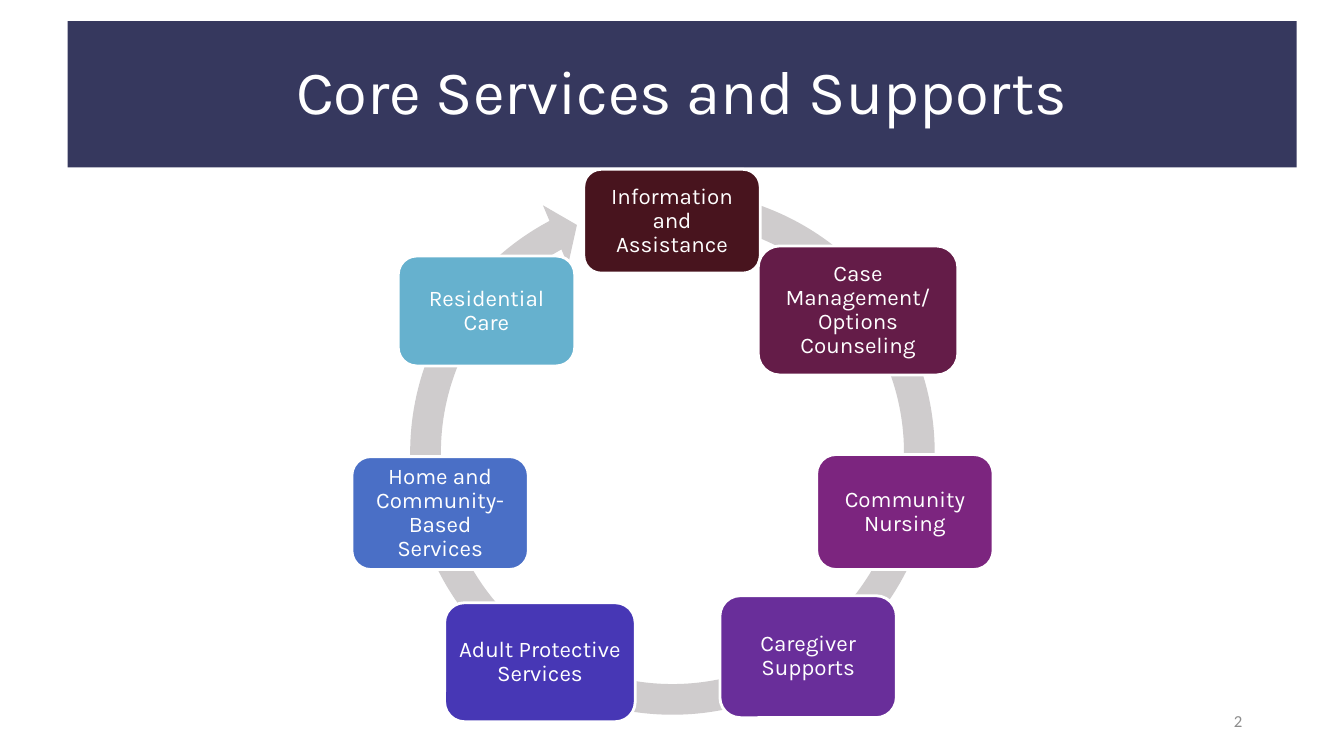
from dataclasses import dataclass

from pptx import Presentation
from pptx.dml.color import RGBColor
from pptx.enum.shapes import MSO_SHAPE as Preset
from pptx.enum.text import MSO_ANCHOR as Anchor, PP_ALIGN as Align
from pptx.shapes.autoshape import Shape
from pptx.slide import Slide
from pptx.util import Inches, Pt


@dataclass(frozen=True)
class Theme:
    white: str = "FFFFFF"
    banner: str = "36385E"
    ring: str = "CFCCCD"
    number: str = "8C8C8C"
    heading_font: str = "Karla"
    number_font: str = "Calibri"
    title_size: int = 44
    service_size: int = 16
    number_size: int = 12


@dataclass(frozen=True)
class Service:
    name: str
    fill: str
    left: float
    top: float
    width: float
    height: float


THEME = Theme()
CARD_WIDTH = 1.75
CARD_INSET = 0.07
RING_ADJUSTMENTS = (0.055, 3.307, 145.033, 169.574, 0.058)

# Clockwise from the top of the ring
SERVICES = (
    Service("Information and Assistance", "48141E", 5.79, 1.68, CARD_WIDTH, 1.03),
    Service("Case Management/ Options Counseling", "641C48", 7.52, 2.44, 1.98, 1.28),
    Service("Community Nursing", "7C257F", 8.1, 4.51, CARD_WIDTH, 1.14),
    Service("Caregiver Supports", "692E9A", 7.14, 5.91, CARD_WIDTH, 1.21),
    Service("Adult Protective Services", "4737B5", 4.41, 5.98, 1.89, 1.18),
    Service("Home and Community-Based Services", "4A6FC6", 3.49, 4.53, CARD_WIDTH, 1.12),
    Service("Residential Care", "66B1CE", 3.95, 2.54, CARD_WIDTH, 1.09),
)


def add_preset(page: Slide, preset: Preset, left: float, top: float,
               width: float, height: float, fill: str) -> Shape:
    box = page.shapes.add_shape(
        preset, Inches(left), Inches(top), Inches(width), Inches(height))
    box.shadow.inherit = False
    box.fill.solid()
    box.fill.fore_color.rgb = RGBColor.from_string(fill)
    box.line.fill.background()
    return box


def write_text(box: Shape, text: str, font: str, size: int, color: str,
               align: Align = Align.CENTER, line_spacing: float = 0.9) -> None:
    frame = box.text_frame
    frame.word_wrap = True
    frame.vertical_anchor = Anchor.MIDDLE
    para = frame.paragraphs[0]
    para_format = {"alignment": align, "line_spacing": line_spacing}
    for name, value in para_format.items():
        setattr(para, name, value)
    span = para.add_run()
    span.text = text
    for name, value in {"name": font, "size": Pt(size)}.items():
        setattr(span.font, name, value)
    span.font.color.rgb = RGBColor.from_string(color)


def add_service(page: Slide, service: Service) -> None:
    box = add_preset(page, Preset.ROUNDED_RECTANGLE, service.left, service.top,
                     service.width, service.height, service.fill)
    box.line.color.rgb = RGBColor.from_string(THEME.white)
    box.line.width = Pt(2)
    for side in ("left", "top", "right", "bottom"):
        setattr(box.text_frame, f"margin_{side}", Inches(CARD_INSET))
    write_text(box, service.name, THEME.heading_font, THEME.service_size, THEME.white)


def main() -> None:
    deck = Presentation()
    deck.slide_width, deck.slide_height = Inches(13.33), Inches(7.5)
    page = deck.slides.add_slide(deck.slide_layouts[6])

    # Title banner
    banner = add_preset(page, Preset.RECTANGLE, 0.67, 0.21, 12.19, 1.45, THEME.banner)
    write_text(banner, "Core Services and Supports", THEME.heading_font,
               THEME.title_size, THEME.white)

    # Page number
    number = page.shapes.add_textbox(Inches(9.42), Inches(6.95), Inches(3), Inches(0.4))
    write_text(number, "2", THEME.number_font, THEME.number_size, THEME.number,
               Align.RIGHT, 1.0)

    # Ring arrow behind the services
    ring = add_preset(page, Preset.CIRCULAR_ARROW, 3.9, 1.72, 5.54, 5.54, THEME.ring)
    for index, value in enumerate(RING_ADJUSTMENTS):
        ring.adjustments[index] = value

    # Service cards
    for service in SERVICES:
        add_service(page, service)

    deck.save("out.pptx")


if __name__ == "__main__":
    main()
